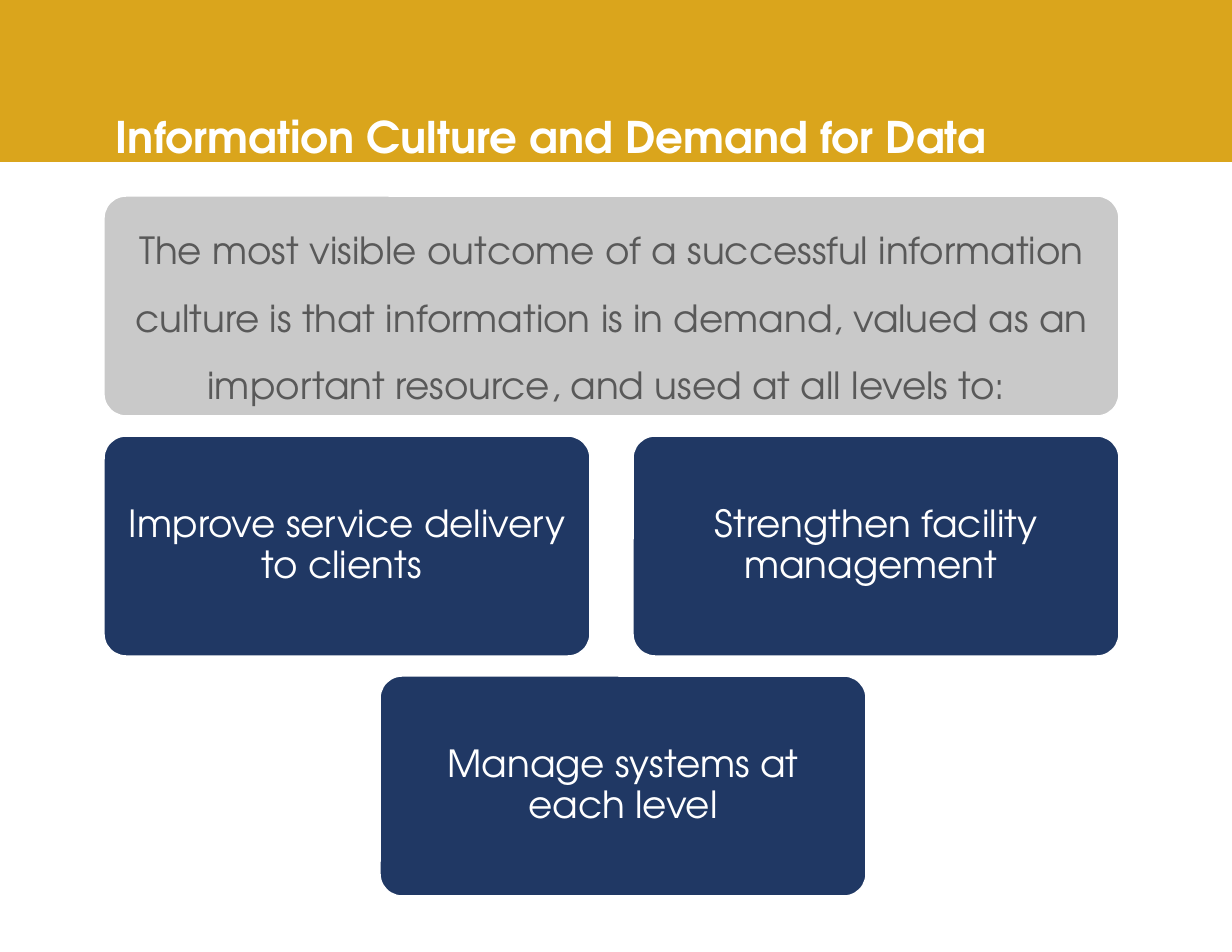
import pptx
import pptx.dml.color
import pptx.enum.shapes
import pptx.enum.text
import pptx.util

COLOURS = {
    "gold": "DAA51C",
    "grey": "C9C9C9",
    "navy": "203864",
    "ink": "595959",
    "white": "FFFFFF",
}
PX = 914400 // 112
WIDTH, HEIGHT = 1232, 952
LEFT, TOP = 104, 196
CARD_WIDTH, CARD_HEIGHT = 486, 220
COLUMN_STEP, ROW_STEP = 529, 240


class SlideBuilder:
    """Holds the style and the current slide, and draws its elements."""

    font = "TeX Gyre Adventor"

    def __init__(self, deck):
        self.slide = deck.slides.add_slide(deck.slide_layouts[5])

    def colour(self, name):
        return pptx.dml.color.RGBColor.from_string(COLOURS[name])

    def set_text(self, box, text, size, colour, spacing, bold=False):
        frame = box.text_frame
        frame.text = text
        frame.word_wrap = True
        frame.auto_size = pptx.enum.text.MSO_AUTO_SIZE.NONE
        frame.vertical_anchor = pptx.enum.text.MSO_ANCHOR.MIDDLE
        para = frame.paragraphs[0]
        para.alignment = pptx.enum.text.PP_ALIGN.CENTER
        para.line_spacing = spacing
        span = para.runs[0]
        span.font.name = self.font
        span.font.size = pptx.util.Pt(size)
        span.font.bold = bold
        span.font.color.rgb = self.colour(colour)

    def title(self, text, left, top, width, height):
        box = self.slide.shapes.title
        box.left, box.top = left * PX, top * PX
        box.width, box.height = width * PX, height * PX
        self.set_text(box, text, 28, "white", 0.9, bold=True)

    def shape(self, kind, fill, left, top, width, height):
        box = self.slide.shapes.add_shape(
            kind, left * PX, top * PX, width * PX, height * PX
        )
        box.shadow.inherit = False
        box.fill.solid()
        box.fill.fore_color.rgb = self.colour(fill)
        return box

    def banner(self, height):
        box = self.shape(
            pptx.enum.shapes.MSO_SHAPE.RECTANGLE, "gold", 0, 0, WIDTH, height
        )
        box.line.fill.background()
        self.slide.shapes.title.element.addprevious(box.element)

    def card(self, text, left, top, width, fill="navy", ink="white", spacing=0.9):
        box = self.shape(
            pptx.enum.shapes.MSO_SHAPE.ROUNDED_RECTANGLE,
            fill, left, top, width, CARD_HEIGHT,
        )
        box.adjustments[0] = 0.1
        box.line.color.rgb = self.colour("white")
        box.line.width = pptx.util.Pt(1)
        self.set_text(box, text, 24, ink, spacing)
        frame = box.text_frame
        frame.margin_left = frame.margin_right = 11 * PX
        frame.margin_top = frame.margin_bottom = 11 * PX
        frame.paragraphs[0].space_after = pptx.util.Pt(8.4)


def main():
    deck = pptx.Presentation()
    deck.slide_width, deck.slide_height = WIDTH * PX, HEIGHT * PX
    builder = SlideBuilder(deck)
    builder.banner(162)
    builder.title("Information Culture and Demand for Data", -65, 56, WIDTH, 166)
    builder.card(
        "The most visible outcome of a successful information culture is that "
        "information is in demand, valued as an important resource, and used "
        "at all levels to: ",
        LEFT, TOP, COLUMN_STEP + CARD_WIDTH,
        fill="grey", ink="ink", spacing=1.5,
    )
    uses = [
        ("Improve service delivery to clients ", LEFT, 1),
        ("Manage systems at each level", 380, 2),
        ("Strengthen facility management ", LEFT + COLUMN_STEP, 1),
    ]
    for text, left, row in uses:
        builder.card(text, left, TOP + row * ROW_STEP, CARD_WIDTH)
    deck.save("out.pptx")


if __name__ == "__main__":
    main()
